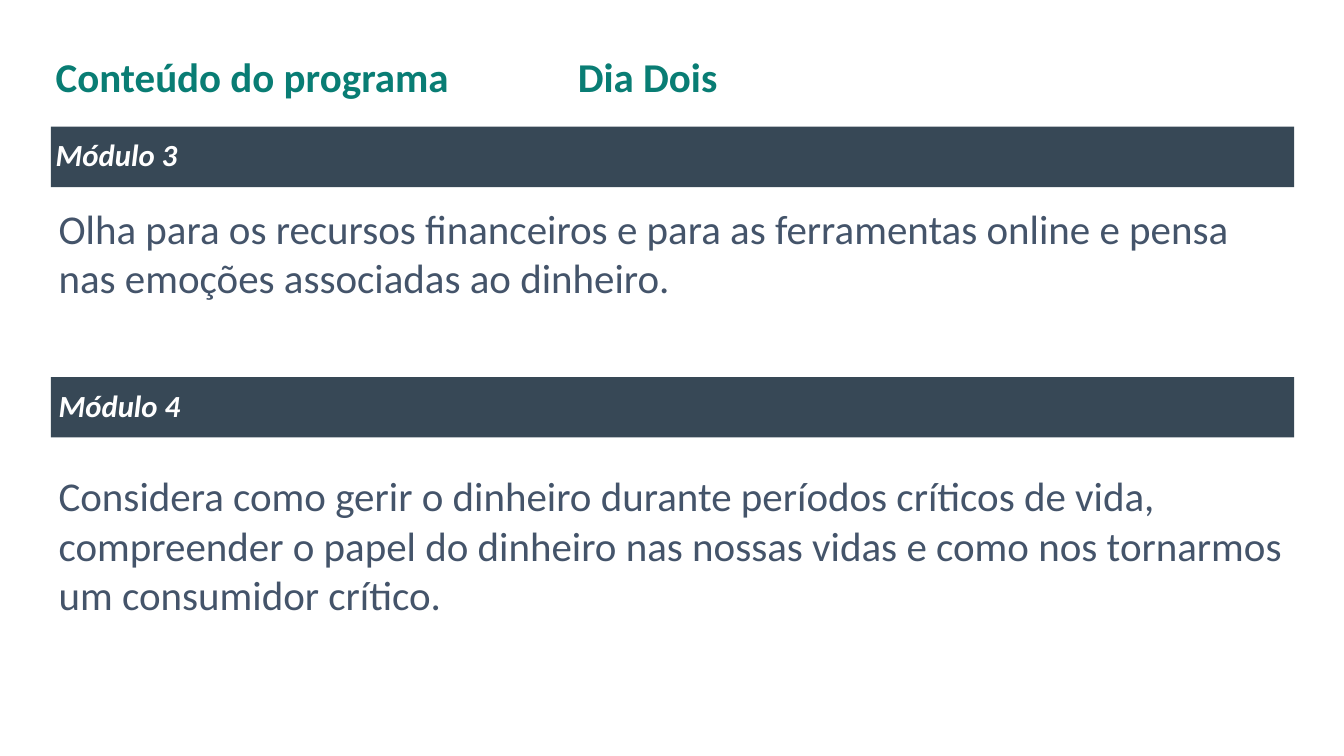
"""Builds the programme content slide for day two."""
from dataclasses import dataclass

from lxml import etree
from pptx import Presentation
from pptx import util as u
from pptx.dml.color import RGBColor
from pptx.enum import shapes, text
from pptx.oxml.ns import qn

PX = 9525
INSET = 5
BAR_LEFT, BAR_WIDTH, BAR_HEIGHT = 53, 1295, 63
BODY_LEFT, BODY_WIDTH = 56, 1289
DAY_TAB = 544

FORMATS = {
    "title": {"name": "Calibri", "size": u.Pt(32), "bold": True},
    "bar": {"name": "Calibri", "size": u.Pt(24), "bold": True, "italic": True},
    "body": {"name": "Calibri", "size": u.Pt(32)},
}
COLORS = {"title": "097D74", "bar": "FFFFFF", "body": "44546A"}
BAR_FILL = "374856"


@dataclass(frozen=True)
class Module:
    """One module: a heading bar and its description."""
    heading: str
    description: str
    bar_top: int
    heading_inset: int
    body_top: int
    body_height: int


MODULES = [
    Module("Módulo 3",
           "Olha para os recursos financeiros e para as ferramentas online "
           "e pensa nas emoções associadas ao dinheiro.",
           132, 5, 207, 164),
    Module("Módulo 4",
           "Considera como gerir o dinheiro durante períodos críticos de vida, "
           "compreender o papel do dinheiro nas nossas vidas e como nos "
           "tornarmos um consumidor crítico.",
           393, 8, 486, 165),
]


def px(value: int) -> u.Emu:
    """Turn pixels into EMU."""
    return u.Emu(value * PX)


def color(value: str) -> RGBColor:
    """Turn a hex string into a colour."""
    return RGBColor.from_string(value)


def write(shape, words: str, role: str, anchor, left_inset: int = INSET,
          spacing: float = 1.0, tab: int | None = None) -> None:
    """Write one formatted paragraph into a shape."""
    frame = shape.text_frame
    settings = {
        "word_wrap": True, "vertical_anchor": anchor,
        "margin_left": px(left_inset), "margin_right": px(INSET),
        "margin_top": px(INSET), "margin_bottom": px(INSET),
    }
    for name, value in settings.items():
        setattr(frame, name, value)
    paragraph = frame.paragraphs[0]
    paragraph.alignment = text.PP_ALIGN.LEFT
    paragraph.line_spacing = spacing
    if tab is not None:
        properties = paragraph._p.get_or_add_pPr()
        tabs = etree.SubElement(properties, qn("a:tabLst"))
        etree.SubElement(tabs, qn("a:tab"), pos=str(px(tab)), algn="l")
    run = paragraph.add_run()
    run.text = words
    for name, value in FORMATS[role].items():
        setattr(run.font, name, value)
    run.font.color.rgb = color(COLORS[role])


def add_title(slide) -> None:
    """Add the slide title, with the day at a tab stop."""
    box = slide.shapes.add_textbox(px(BAR_LEFT), px(45), px(BAR_WIDTH), px(76))
    write(box, "Conteúdo do programa\tDia Dois", "title",
          text.MSO_ANCHOR.MIDDLE, spacing=0.9, tab=DAY_TAB)


def add_module(slide, module: Module) -> None:
    """Add the heading bar and description of a module."""
    bar = slide.shapes.add_shape(
        shapes.MSO_SHAPE.RECTANGLE, px(BAR_LEFT), px(module.bar_top),
        px(BAR_WIDTH), px(BAR_HEIGHT))
    bar.shadow.inherit = False
    bar.fill.solid()
    bar.fill.fore_color.rgb = color(BAR_FILL)
    bar.line.fill.background()
    write(bar, module.heading, "bar", text.MSO_ANCHOR.MIDDLE,
          left_inset=module.heading_inset, spacing=0.9)
    body = slide.shapes.add_textbox(
        px(BODY_LEFT), px(module.body_top), px(BODY_WIDTH), px(module.body_height))
    write(body, module.description, "body", text.MSO_ANCHOR.TOP)


def main() -> None:
    """Build and save the presentation."""
    presentation = Presentation()
    presentation.slide_width, presentation.slide_height = px(1400), px(788)
    slide = presentation.slides.add_slide(presentation.slide_layouts[6])
    add_title(slide)
    for module in MODULES:
        add_module(slide, module)
    presentation.save("out.pptx")


if __name__ == "__main__":
    main()
